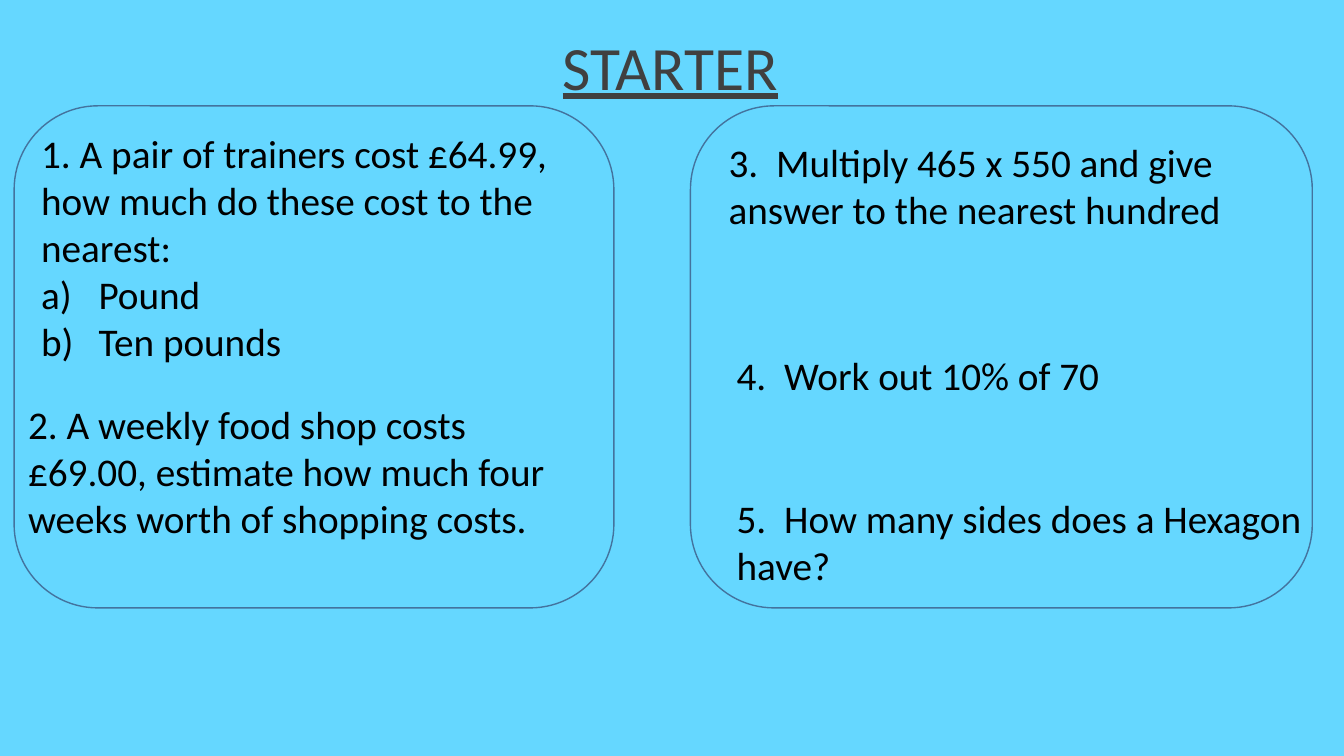
from lxml import etree
from pptx import Presentation
from pptx.dml import color
from pptx.enum import shapes, text
from pptx.oxml import ns
from pptx.util import Pt

# Content: boxes are left, top, width, height in points
COLOURS = {"background": "65D7FF", "outline": "43739E",
           "title": "404040", "question": "000000"}
TITLE = ("STARTER", (118.8, 10.8, 720, 78.5))
PANEL_TOP, PANEL_HEIGHT = 75.6, 358.6
PANELS = [(10.1, 428.4), (493.2, 444.2)]  # left, width
# box, distance from label to wording, paragraphs
QUESTIONS = [
    ((22.3, 88.6, 404.6, 177.1), 41,
     ["1. A pair of trainers cost £64.99, how much do these cost to the nearest:",
      "a)\tPound", "b)\tTen pounds"]),
    ((13, 282.2, 410.4, 108.7), 34,
     ["2. A weekly food shop costs £69.00, estimate how much four "
      "weeks worth of shopping costs."]),
    ((513.4, 95, 412.6, 74.9), 34,
     ["3.\tMultiply 465 x 550 and give answer to the nearest hundred"]),
    ((519.1, 247.7, 479.5, 41), 34, ["4.\tWork out 10% of 70"]),
    ((519.1, 349.2, 434.9, 74.9), 34,
     ["5.\tHow many sides does a Hexagon have?"]),
]
TITLE_FONT = {"name": "Calibri", "size": Pt(44), "underline": True, "bold": False}
QUESTION_FONT = {"name": "Calibri", "size": Pt(28)}


def colour(name):
    return color.RGBColor.from_string(COLOURS[name])


def write(para, words, font_values, colour_name):
    span = para.add_run()
    span.text = words
    for key, value in font_values.items():
        setattr(span.font, key, value)
    span.font.color.rgb = colour(colour_name)


def add_tab_stop(para, distance):
    stops = etree.SubElement(para._p.get_or_add_pPr(), ns.qn("a:tabLst"))
    etree.SubElement(stops, ns.qn("a:tab"), pos=str(Pt(distance)), algn="l")


# Slide and background
deck = Presentation()
deck.slide_width, deck.slide_height = Pt(960), Pt(540)
page = deck.slides.add_slide(deck.slide_layouts[5])
page.background.fill.solid()
page.background.fill.fore_color.rgb = colour("background")

# Title
words, box = TITLE
title = page.shapes.title
title.left, title.top, title.width, title.height = map(Pt, box)
frame = title.text_frame
frame.auto_size = text.MSO_AUTO_SIZE.NONE
frame.vertical_anchor = text.MSO_ANCHOR.MIDDLE
para = frame.paragraphs[0]
para.alignment = text.PP_ALIGN.CENTER
para.line_spacing = 0.9
write(para, words, TITLE_FONT, "title")

# Rounded panels
for left, width in PANELS:
    panel = page.shapes.add_shape(
        shapes.MSO_SHAPE.ROUNDED_RECTANGLE,
        *map(Pt, (left, PANEL_TOP, width, PANEL_HEIGHT)))
    panel.shadow.inherit = False
    panel.fill.background()
    panel.line.color.rgb = colour("outline")
    panel.line.width = Pt(1)

# Questions
for box, distance, lines in QUESTIONS:
    frame = page.shapes.add_textbox(*map(Pt, box)).text_frame
    frame.word_wrap = True
    frame.auto_size = text.MSO_AUTO_SIZE.SHAPE_TO_FIT_TEXT
    for index, line in enumerate(lines):
        para = frame.add_paragraph() if index else frame.paragraphs[0]
        if "\t" in line:
            add_tab_stop(para, distance)
        write(para, line, QUESTION_FONT, "question")

deck.save("out.pptx")
